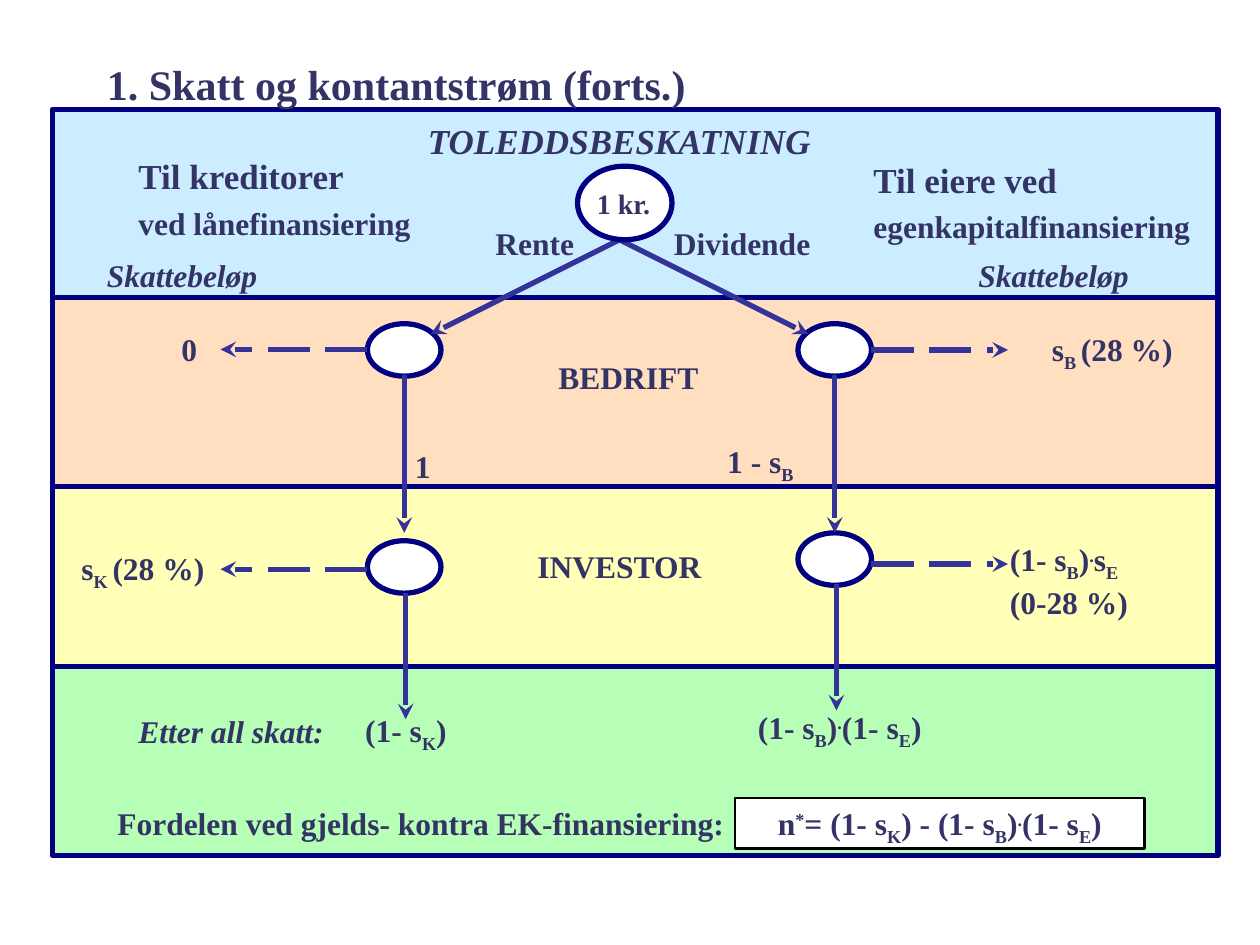
from dataclasses import dataclass
from typing import NamedTuple

from lxml import etree
from pptx import Presentation
from pptx.dml.color import RGBColor
from pptx.enum.dml import MSO_LINE
from pptx.enum.shapes import MSO_CONNECTOR, MSO_SHAPE
from pptx.enum.text import MSO_ANCHOR, PP_ALIGN
from pptx.oxml.ns import qn
from pptx.util import Pt

RECTANGLE, OVAL = MSO_SHAPE.RECTANGLE, MSO_SHAPE.OVAL
STRAIGHT = MSO_CONNECTOR.STRAIGHT
LONG_DASH = MSO_LINE.LONG_DASH
LEFT, CENTER = PP_ALIGN.LEFT, PP_ALIGN.CENTER
TOP, MIDDLE = MSO_ANCHOR.TOP, MSO_ANCHOR.MIDDLE
BASELINES = {"_": "-25000", "^": "30000"}


@dataclass(frozen=True)
class Theme:
    font: str = "Times New Roman"
    ink: str = "333366"
    border: str = "000080"
    arrow: str = "333399"
    white: str = "FFFFFF"
    black: str = "000000"
    blue: str = "CCECFF"
    yellow: str = "FFFFB7"
    orange: str = "FFDFBF"
    green: str = "B7FFB7"
    title: float = 24
    heading: float = 20
    body: float = 18
    small: float = 16
    stroke: float = 3
    thin: float = 1.5


THEME = Theme()


class Area(NamedTuple):
    left: float
    top: float
    width: float
    height: float = 28.8


class Arrow(NamedTuple):
    x1: float
    y1: float
    x2: float
    y2: float
    dashed: bool = False


class Label(NamedTuple):
    text: str
    area: Area
    italic: bool = False
    wrap: bool = True
    size: float = THEME.body


BAND_LEFT, BAND_WIDTH, BAND_HEIGHT = 30, 666, 108
BANDS = [(62.6, THEME.blue), (273, THEME.yellow), (170, THEME.orange), (381, THEME.green)]

NODE_WIDTH, NODE_HEIGHT = 42, 30
NODES = [(210, 185), (456, 185), (210, 309), (456, 304.5)]
SOURCE = Area(330, 95, 54, 42)

ARROWS = [
    Arrow(354, 137, 462, 191),
    Arrow(354, 137, 246, 191),
    Arrow(477, 214.5, 477, 304.5),
    Arrow(231, 214.5, 231, 304.5),
    Arrow(231.8, 339, 231.8, 411),
    Arrow(478, 334, 478, 406),
    Arrow(498, 200, 576, 200, True),
    Arrow(210, 199.7, 126, 199.7, True),
    Arrow(210, 325.3, 126, 325.3, True),
    Arrow(498, 322.3, 576, 322.3, True),
]

LABELS = [
    Label("Rente", Area(276, 124.5, 78)),
    Label("Dividende", Area(378, 124.5, 102)),
    Label("Skattebeløp", Area(54, 142.6, 102), italic=True),
    Label("Skattebeløp", Area(552, 142.6, 102), italic=True),
    Label("BEDRIFT", Area(312, 201, 102)),
    Label("INVESTOR", Area(300, 309, 120)),
    Label("1 kr.", Area(334, 103, 47, 26.6), wrap=False, size=THEME.small),
    Label("0", Area(96.5, 185, 24), wrap=False),
    Label("s|_B |(28 %)", Area(594, 185, 85), wrap=False),
    Label("1 - s|_B", Area(408.5, 249, 53), wrap=False),
    Label("1", Area(230, 252, 24), wrap=False),
    Label("s|_K |(28 %)", Area(39.5, 310.3, 86.4), wrap=False),
    Label("(1- s|_B|)|^.|s|_E\n(0-28 %)", Area(570, 305.3, 150, 50.4)),
    Label("Etter all skatt:", Area(72, 403.5, 144), italic=True),
    Label("(1- s|_K|)", Area(201.6, 402.8, 62.6), wrap=False),
    Label("(1- s|_B|)|^.|(1- s|_E|)", Area(426, 401, 126)),
    Label("Fordelen ved gjelds- kontra EK-finansiering:", Area(60, 456, 366)),
]


def rgb(color: str) -> RGBColor:
    return RGBColor.from_string(color)


def write(box, text: str, *, sizes=(THEME.body,), italic=False, align=LEFT,
          anchor=TOP, wrap=True, gap=0) -> None:
    frame = box.text_frame
    frame.word_wrap = wrap
    frame.vertical_anchor = anchor
    for index, line in enumerate(text.split("\n")):
        para = frame.add_paragraph() if index else frame.paragraphs[0]
        para.alignment = align
        if index and gap:
            para.space_before = Pt(gap)
        for piece in line.split("|"):
            span = para.add_run()
            span.text = piece.lstrip("_^")
            font = span.font
            font.name, font.size = THEME.font, Pt(sizes[min(index, len(sizes) - 1)])
            font.bold, font.italic = True, italic
            font.color.rgb = rgb(THEME.ink)
            if piece[0] in BASELINES:
                span._r.get_or_add_rPr().set("baseline", BASELINES[piece[0]])


def add_text(page, text: str, area: Area, **style) -> None:
    write(page.shapes.add_textbox(*map(Pt, area)), text, **style)


def add_box(page, kind, area: Area, fill: str, line=THEME.border, stroke=THEME.stroke):
    box = page.shapes.add_shape(kind, *map(Pt, area))
    box.shadow.inherit = False
    box.fill.solid()
    box.fill.fore_color.rgb = rgb(fill)
    box.line.color.rgb = rgb(line)
    box.line.width = Pt(stroke)
    return box


def add_arrow(page, arrow: Arrow) -> None:
    connector = page.shapes.add_connector(STRAIGHT, *map(Pt, arrow[:4]))
    line = connector.line
    line.color.rgb = rgb(THEME.arrow)
    line.width = Pt(THEME.stroke)
    if arrow.dashed:
        line.dash_style = LONG_DASH
    etree.SubElement(line._get_or_add_ln(), qn("a:tailEnd"), type="stealth")
    etree.SubElement(connector._element.spPr, qn("a:effectLst"))


def main() -> None:
    deck = Presentation()
    deck.slide_width, deck.slide_height = Pt(720), Pt(540)
    page = deck.slides.add_slide(deck.slide_layouts[6])

    for top, color in BANDS:
        add_box(page, RECTANGLE, Area(BAND_LEFT, top, BAND_WIDTH, BAND_HEIGHT), color)
    for left, top in NODES:
        add_box(page, OVAL, Area(left, top, NODE_WIDTH, NODE_HEIGHT), THEME.white)
    for arrow in ARROWS:
        add_arrow(page, arrow)
    add_box(page, OVAL, SOURCE, THEME.white)

    for label in LABELS:
        add_text(page, label.text, label.area, sizes=(label.size,),
                 italic=label.italic, wrap=label.wrap)
    add_text(page, "TOLEDDSBESKATNING", Area(228, 64.6, 252, 36),
             sizes=(THEME.heading,), italic=True, align=CENTER)
    headings = (THEME.heading, THEME.body)
    add_text(page, "Til kreditorer\nved lånefinansiering", Area(72, 85, 198, 54),
             sizes=headings, gap=4)
    add_text(page, "Til eiere ved\negenkapitalfinansiering", Area(492, 87, 210, 54),
             sizes=headings, gap=4)

    formula = add_box(page, RECTANGLE, Area(420, 456, 234), THEME.white,
                      THEME.black, THEME.thin)
    write(formula, "n|^*|= (1- s|_K|) - (1- s|_B|)|^.|(1- s|_E|)", align=CENTER)
    add_text(page, "1. Skatt og kontantstrøm (forts.)", Area(54, 15, 642, 66),
             sizes=(THEME.title,), anchor=MIDDLE)
    deck.save("out.pptx")


if __name__ == "__main__":
    main()
